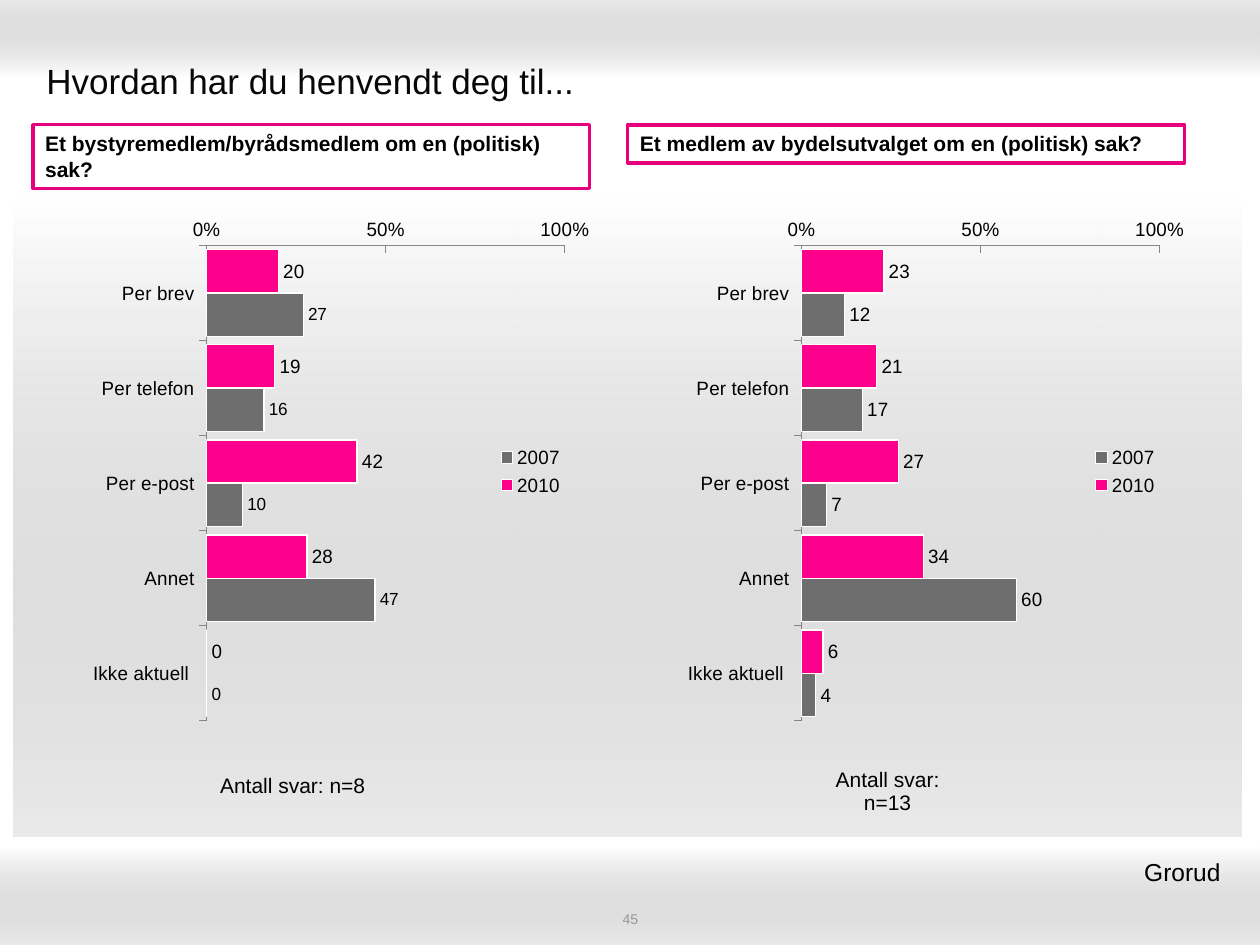
from dataclasses import dataclass

from lxml.etree import SubElement
from pptx import Presentation
from pptx.chart.data import CategoryChartData
from pptx.dml.color import RGBColor
from pptx.enum.chart import XL_CHART_TYPE, XL_LABEL_POSITION, XL_LEGEND_POSITION, XL_TICK_MARK
from pptx.enum.shapes import MSO_SHAPE
from pptx.enum.text import MSO_ANCHOR, PP_ALIGN
from pptx.oxml import parse_xml
from pptx.oxml.ns import nsdecls, qn
from pptx.util import Pt


@dataclass(frozen=True)
class Theme:
    font: str = "Arial"
    black: RGBColor = RGBColor(0, 0, 0)
    white: RGBColor = RGBColor(255, 255, 255)
    title_ink: RGBColor = RGBColor(8, 8, 8)
    muted: RGBColor = RGBColor(0x96, 0x96, 0x96)
    shade: RGBColor = RGBColor(0x99, 0x99, 0x99)
    axis: RGBColor = RGBColor(0x86, 0x86, 0x86)
    frame: RGBColor = RGBColor(0xE7, 0, 0x7E)
    pink: RGBColor = RGBColor(0xFF, 0, 0x8C)
    grey: RGBColor = RGBColor(0x6E, 0x6E, 0x6E)
    title_size: int = 20
    district_size: int = 14
    text_size: int = 12
    chart_size: int = 11
    small_label_size: int = 10
    page_size: int = 8


THEME = Theme()
CATEGORIES = ["Per brev", "Per telefon", "Per e-post", "Annet", "Ikke aktuell "]
PLOT_AREA = {"x": 0.32, "y": 0.065, "w": 0.659, "h": 0.916}


def points(box):
    return [Pt(length) for length in box]


def style_text(frame, text, size, color=THEME.black, align=PP_ALIGN.LEFT, bold=False):
    frame.text = text
    frame.word_wrap = True
    paragraph = frame.paragraphs[0]
    paragraph.alignment = align
    for run in paragraph.runs:
        run.font.name = THEME.font
        run.font.size = Pt(size)
        run.font.bold = bold
        run.font.color.rgb = color


def add_label(slide, box, text, size, anchor=MSO_ANCHOR.MIDDLE, **style):
    frame = slide.shapes.add_textbox(*points(box)).text_frame
    style_text(frame, text, size, **style)
    frame.vertical_anchor = anchor


def add_shaded_band(slide, box, angle):
    """A rectangle fading from white to translucent grey."""
    band = slide.shapes.add_shape(MSO_SHAPE.RECTANGLE, *points(box))
    band.shadow.inherit = False
    band.line.fill.background()
    band.fill.gradient()
    band.fill.gradient_angle = angle
    start, end = band.fill.gradient_stops
    start.color.rgb, end.color.rgb = THEME.white, THEME.shade
    start.position, end.position = 0, 1
    end_color = list(band._element.spPr.iter(qn("a:srgbClr")))[-1]
    SubElement(end_color, qn("a:alpha")).set("val", "20000")


def add_question(slide, box, text):
    question = slide.shapes.add_shape(MSO_SHAPE.RECTANGLE, *points(box))
    question.shadow.inherit = False
    question.fill.solid()
    question.fill.fore_color.rgb = THEME.white
    question.line.color.rgb = THEME.frame
    question.line.width = Pt(2)
    style_text(question.text_frame, text, THEME.text_size, bold=True)
    question.text_frame.vertical_anchor = MSO_ANCHOR.TOP


def fix_plot_area(chart):
    settings = "".join(f'<c:{key}Mode val="edge"/>' for key in "xy")
    settings += "".join(f'<c:{key} val="{share}"/>' for key, share in PLOT_AREA.items())
    layout = parse_xml(
        f'<c:layout {nsdecls("c")}><c:manualLayout><c:layoutTarget val="inner"/>'
        f"{settings}</c:manualLayout></c:layout>"
    )
    plot_area = chart._chartSpace.chart.plotArea
    for previous in plot_area.findall(qn("c:layout")):
        plot_area.remove(previous)
    plot_area.insert(0, layout)


def style_axes(chart):
    for axis in (chart.category_axis, chart.value_axis):
        axis.has_major_gridlines = False
        axis.format.line.color.rgb = THEME.axis
        axis.format.line.width = Pt(0.75)
    chart.category_axis.reverse_order = True
    chart.category_axis.major_tick_mark = XL_TICK_MARK.OUTSIDE
    percent = chart.value_axis
    percent.major_tick_mark = XL_TICK_MARK.INSIDE
    percent.minimum_scale, percent.maximum_scale, percent.major_unit = 0, 100, 50
    percent.tick_labels.number_format = r"General\%"
    percent.tick_labels.number_format_is_linked = False


def add_bar_chart(slide, box, values_2010, values_2007, label_size_2007):
    data = CategoryChartData(number_format="0")
    data.categories = CATEGORIES
    data.add_series("2010", values_2010)
    data.add_series("2007", values_2007)
    chart = slide.shapes.add_chart(XL_CHART_TYPE.BAR_CLUSTERED, *points(box), data).chart
    chart.has_title = False
    chart.font.name = THEME.font
    chart.font.size = Pt(THEME.chart_size)
    chart.font.color.rgb = THEME.black
    chart.has_legend = True
    chart.legend.position = XL_LEGEND_POSITION.RIGHT
    chart.legend.include_in_layout = True
    style_axes(chart)
    fix_plot_area(chart)
    plot = chart.plots[0]
    plot.gap_width = 20
    plot.vary_by_categories = False
    looks = ((THEME.pink, THEME.chart_size), (THEME.grey, label_size_2007))
    for series, (color, label_size) in zip(plot.series, looks):
        series.format.fill.solid()
        series.format.fill.fore_color.rgb = color
        series.format.line.color.rgb = THEME.white
        series.format.line.width = Pt(0.75)
        labels = series.data_labels
        labels.show_value = True
        labels.number_format = "0"
        labels.number_format_is_linked = False
        labels.position = XL_LABEL_POSITION.OUTSIDE_END
        labels.font.name = THEME.font
        labels.font.size = Pt(label_size)
        labels.font.color.rgb = THEME.black


def add_answer_count(slide, box, text):
    table = slide.shapes.add_table(1, 1, *points(box)).table
    table.first_row = table.horz_banding = False
    cell = table.cell(0, 0)
    cell.fill.background()
    cell.vertical_anchor = MSO_ANCHOR.MIDDLE
    style_text(cell.text_frame, text, THEME.text_size, align=PP_ALIGN.CENTER)
    properties = cell._tc.get_or_add_tcPr()
    for place, side in enumerate(("lnL", "lnR", "lnT", "lnB")):
        border = parse_xml(f'<a:{side} {nsdecls("a")} w="0"><a:noFill/></a:{side}>')
        properties.insert(place, border)


def add_question_panel(slide, box, question, question_height, values_2010, values_2007,
                       label_size_2007, answer_count):
    left, top, width, height = box
    add_question(slide, (left, top, width, question_height), question)
    add_bar_chart(slide, (left, top + 49.7, width, 296.6), values_2010, values_2007,
                  label_size_2007)
    add_answer_count(slide, (left + 97.5, top + height - 30, 102.2, 30), answer_count)


def add_background(slide, width, height):
    add_shaded_band(slide, (0, 0, width, 44.6), 90)
    add_shaded_band(slide, (0, height - 56.2, width, 56.2), 270)
    add_shaded_band(slide, (7.9, 112.3, 701.3, 365.8), 270)


def main():
    width, height = 720, 540
    presentation = Presentation()
    presentation.slide_width, presentation.slide_height = Pt(width), Pt(height)
    slide = presentation.slides.add_slide(presentation.slide_layouts[6])
    add_background(slide, width, height)
    add_label(slide, (19.4, 25.9, 680.4, 39.6), "Hvordan har du henvendt deg til...",
              THEME.title_size, color=THEME.title_ink)
    add_question_panel(slide, (18.7, 71.3, 318.2, 393),
                       "Et bystyremedlem/byrådsmedlem om en (politisk) sak?", 36.4,
                       (20, 19, 42, 28, 0), (27, 16, 10, 47, 0),
                       THEME.small_label_size, "Antall svar: n=8")
    add_question_panel(slide, (358.6, 71.3, 318.2, 393),
                       "Et medlem av bydelsutvalget om en (politisk) sak?", 21.8,
                       (23, 21, 27, 34, 6), (12, 17, 7, 60, 4),
                       THEME.chart_size, "Antall svar: n=13")
    add_label(slide, (439.2, 486, 269.3, 24.5), "Grorud ", THEME.district_size,
              anchor=MSO_ANCHOR.TOP, align=PP_ALIGN.RIGHT)
    add_label(slide, (246.2, 519.8, 228.2, 10.1), "45", THEME.page_size,
              color=THEME.muted, align=PP_ALIGN.CENTER)
    presentation.save("out.pptx")


if __name__ == "__main__":
    main()
